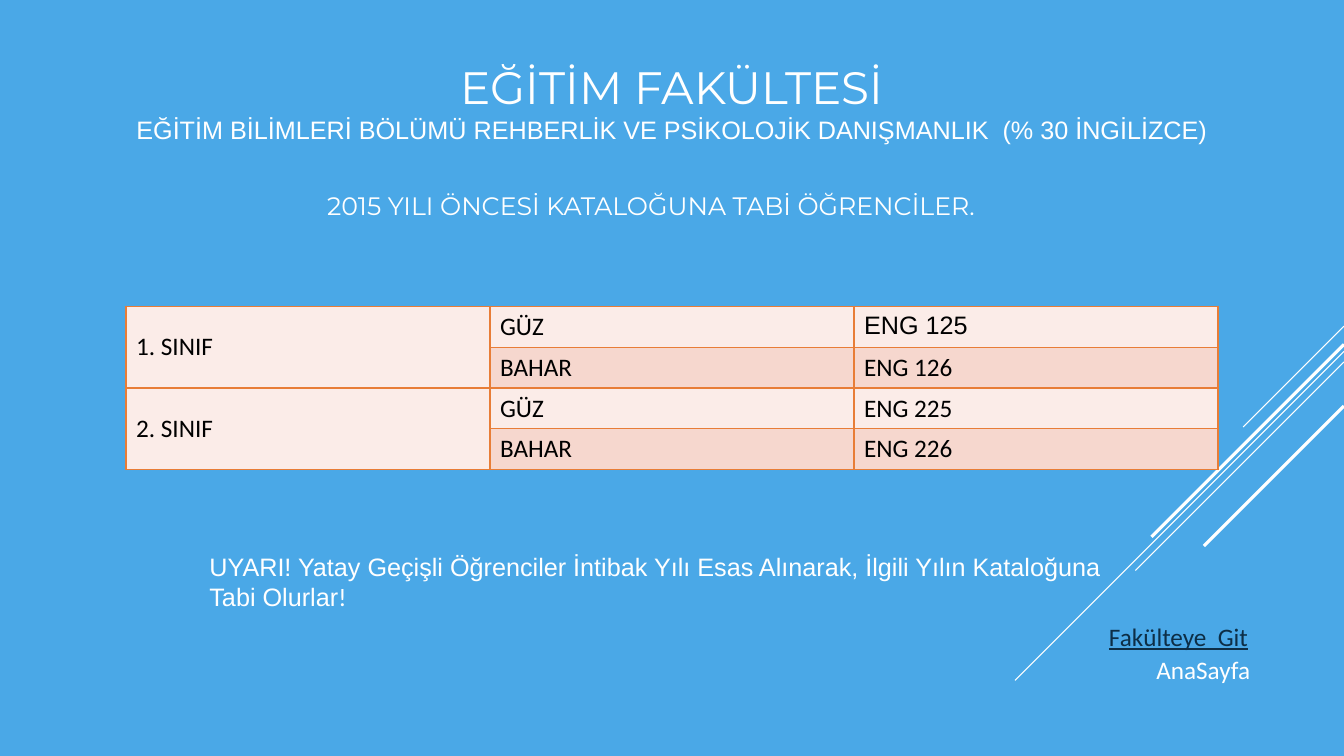
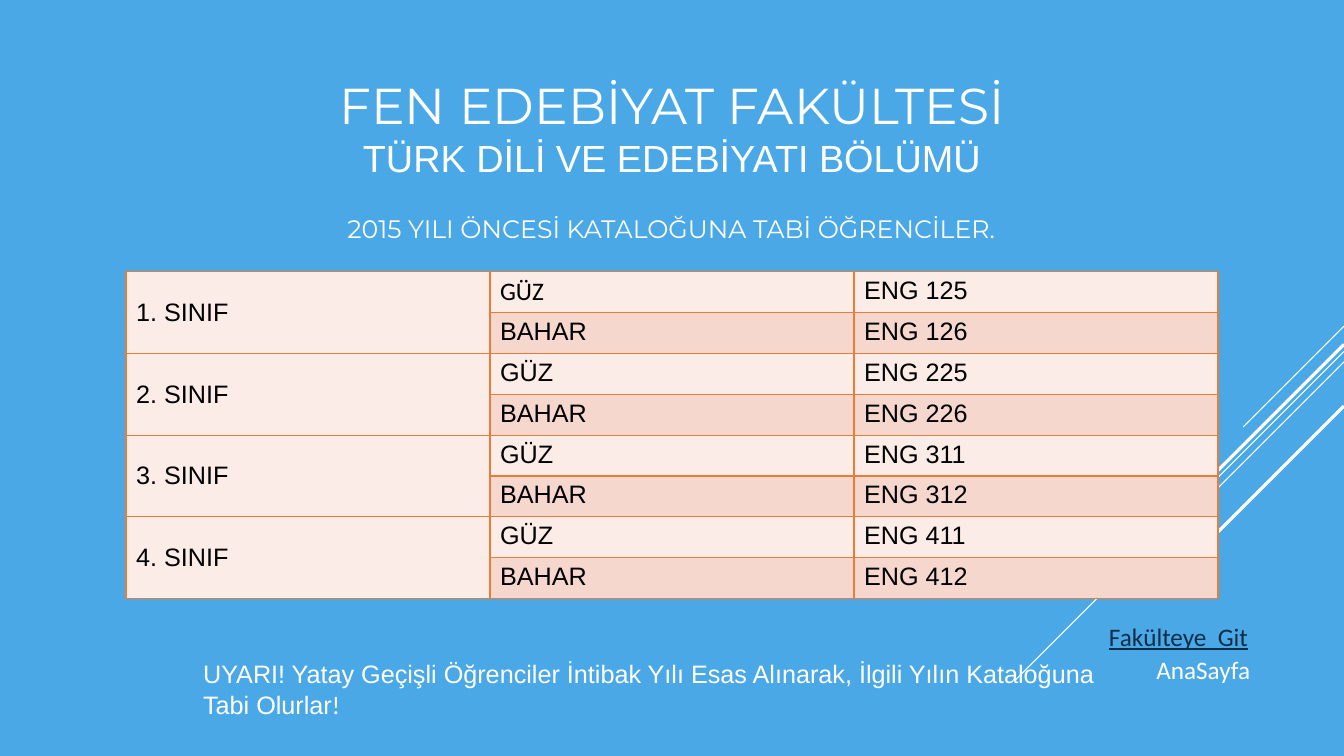
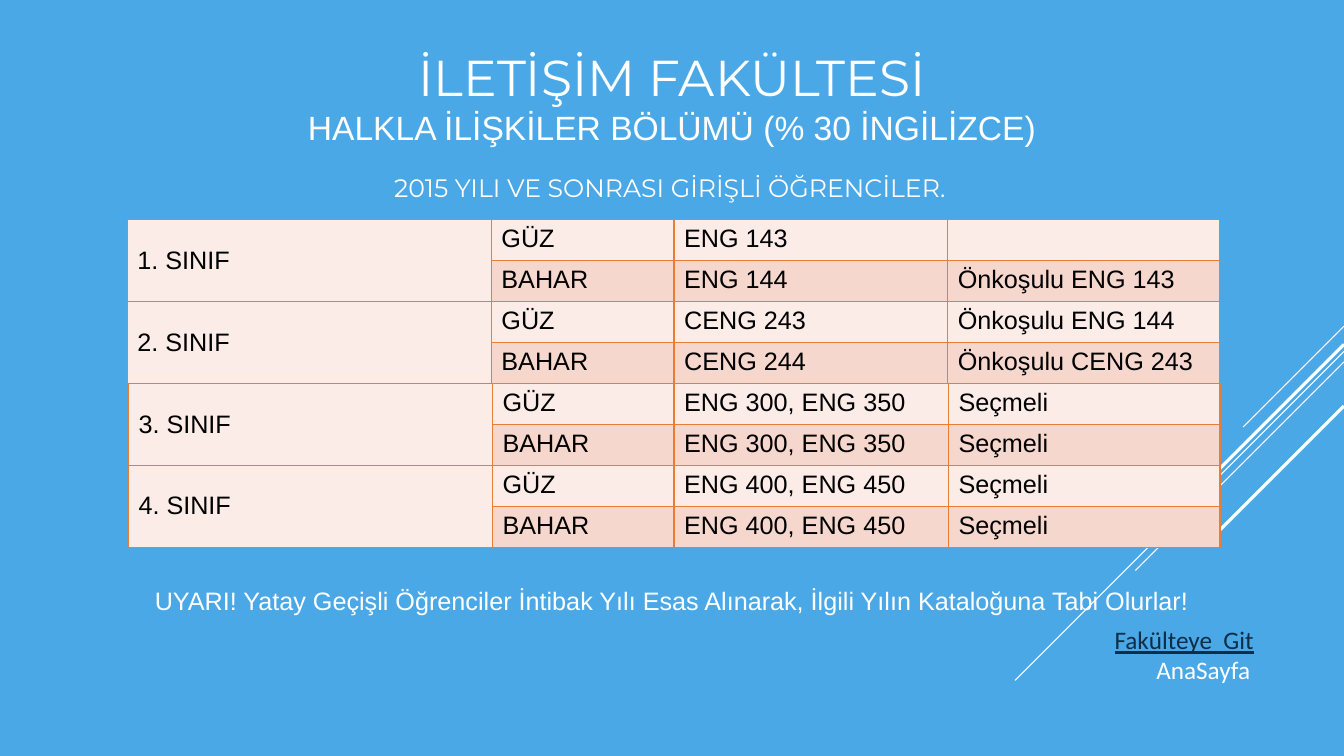
from dataclasses import dataclass

from lxml.etree import SubElement
from pptx import Presentation
from pptx.dml.color import RGBColor
from pptx.enum.shapes import MSO_CONNECTOR
from pptx.enum.text import MSO_ANCHOR, MSO_AUTO_SIZE, PP_ALIGN
from pptx.oxml.ns import qn
from pptx.util import Pt


@dataclass(frozen=True)
class Theme:
    background: str = "4AA8E7"
    light: str = "FFFFFF"
    dark: str = "000000"
    link: str = "0D2E46"
    border: str = "E87D37"
    bands: tuple = ("FBECE8", "F6D7CE")
    heading_font: str = "Montserrat"
    text_font: str = "Arial"
    nav_font: str = "Calibri"
    title_size: float = 36
    body_size: float = 18


T = Theme()
WIDTH, HEIGHT = 960, 540
ROW_HEIGHT = 29.2
TERMS = ("GÜZ", "BAHAR")
THREE_COLS = (260, 260, 260)
BEFORE_2015 = "2015 YILI ÖNCESİ KATALOĞUNA TABİ ÖĞRENCİLER."
SINCE_2015 = "2015 YILI VE SONRASI GİRİŞLİ ÖĞRENCİLER."
WARNING = ("UYARI! Yatay Geçişli Öğrenciler İntibak Yılı Esas Alınarak, "
           "İlgili Yılın Kataloğuna Tabi Olurlar")
# Start height on the right edge, horizontal reach, line width
RAYS = ((233, 72, 0.75), (251, 235, 0.75), (258.5, 149, 0.75),
        (246, 137.5, 2.25), (290, 100, 2.25))


def rgb(value):
    return RGBColor.from_string(value)


def style(font, name, size=T.body_size, color=T.light):
    font.name, font.size = name, Pt(size)
    font.color.rgb = rgb(color)


def add_box(s, box):
    tf = s.shapes.add_textbox(*map(Pt, box)).text_frame
    tf.word_wrap = True
    return tf


def add_line_of_text(s, box, text, font, color=T.light, align=PP_ALIGN.LEFT):
    tf = add_box(s, box)
    tf.auto_size = MSO_AUTO_SIZE.SHAPE_TO_FIT_TEXT
    p = tf.paragraphs[0]
    p.text, p.alignment = text, align
    style(p.font, font, color=color)
    return p


def add_rays(s):
    """Diagonal lines that run down at 45 degrees from the right edge."""
    for top, reach, width in RAYS:
        ray = s.shapes.add_connector(MSO_CONNECTOR.STRAIGHT, Pt(WIDTH), Pt(top),
                                     Pt(WIDTH - reach), Pt(top + reach))
        ray.line.color.rgb = rgb(T.light)
        ray.line.width = Pt(width)
        SubElement(ray._element.spPr, qn("a:effectLst"))


def add_title(s, box, faculty, department, faculty_size, department_size, raise_by=0):
    tf = add_box(s, box)
    tf.vertical_anchor = MSO_ANCHOR.MIDDLE
    tf.margin_bottom = Pt(3.6 + 2 * raise_by)
    lines = ((faculty, T.heading_font, faculty_size),
             (department, T.text_font, department_size))
    for i, (text, font, size) in enumerate(lines):
        p = tf.add_paragraph() if i else tf.paragraphs[0]
        p.text, p.alignment = text, PP_ALIGN.CENTER
        style(p.font, font, size)


def add_warning(s, box, mark_font):
    p = add_line_of_text(s, box, WARNING, T.text_font)
    r = p.add_run()
    r.text, r.font.name = "!", mark_font


def add_navigation(s, left, top):
    add_line_of_text(s, (814, 464, 91, 29), "AnaSayfa", T.nav_font,
                     align=PP_ALIGN.CENTER)
    p = add_line_of_text(s, (left, top, 120, 29), "Fakülteye  Git", T.nav_font, T.link)
    p.font.underline = True


def paint_cell(cell, text, font, fill):
    tcPr = cell._tc.get_or_add_tcPr()
    for side in ("a:lnL", "a:lnR", "a:lnT", "a:lnB"):
        ln = SubElement(tcPr, qn(side), w=str(Pt(1)))
        SubElement(SubElement(ln, qn("a:solidFill")), qn("a:srgbClr"), val=T.border)
    cell.fill.solid()
    cell.fill.fore_color.rgb = rgb(fill)
    p = cell.text_frame.paragraphs[0]
    p.text = text
    style(p.font, font, color=T.dark)


def add_courses(s, left, top, widths, years, first_year=1, font=T.text_font, odd_fonts=None):
    """Two rows, autumn and spring, for each year; odd_fonts maps (row, column) to a font."""
    odd_fonts = odd_fonts or {}
    n = 2 * len(years)
    table = s.shapes.add_table(n, len(widths), Pt(left), Pt(top), Pt(sum(widths)),
                               Pt(n * ROW_HEIGHT)).table
    table.first_row = table.horz_banding = False
    for column, width in zip(table.columns, widths):
        column.width = Pt(width)
    for row in range(n):
        table.rows[row].height = Pt(ROW_HEIGHT)
        year, term = divmod(row, 2)
        label = "" if term else f"{first_year + year}. SINIF"
        for col, text in enumerate((label, TERMS[term], *years[year][term])):
            paint_cell(table.cell(row, col), text, odd_fonts.get((row, col), font),
                       T.bands[term])
    for row in range(0, n, 2):
        table.cell(row, 0).merge(table.cell(row + 1, 0))
        table.cell(row, 0).vertical_anchor = MSO_ANCHOR.MIDDLE


def new_slide(prs):
    s = prs.slides.add_slide(prs.slide_layouts[6])
    s.background.fill.solid()
    s.background.fill.fore_color.rgb = rgb(T.background)
    add_rays(s)
    return s


def add_catalogue(s, left, top, text):
    add_line_of_text(s, (left, top, 620, 29), text, T.heading_font, align=PP_ALIGN.CENTER)


def education_slide(prs):
    s = new_slide(prs)
    add_title(s, (90, 49, 780, 83.5), "EĞİTİM FAKÜLTESİ",
              "EĞİTİM BİLİMLERİ BÖLÜMÜ REHBERLİK VE PSİKOLOJİK DANIŞMANLIK  (% 30 İNGİLİZCE)",
              32.4, T.body_size, raise_by=18)
    add_courses(s, 90, 218.75, THREE_COLS,
                ((("ENG 125",), ("ENG 126",)), (("ENG 225",), ("ENG 226",))),
                font=T.nav_font, odd_fonts={(0, 2): T.text_font})
    add_warning(s, (142.5, 390, 683, 51), T.nav_font)
    add_catalogue(s, 155, 132.5, BEFORE_2015)
    add_navigation(s, 785, 440)


def literature_slide(prs):
    s = new_slide(prs)
    add_title(s, (90, 49, 780, 83.5), "FEN EDEBİYAT FAKÜLTESİ",
              "TÜRK DİLİ VE EDEBİYATI BÖLÜMÜ", T.title_size, 27)
    years = [((f"ENG {autumn}",), (f"ENG {autumn + 1}",))
             for autumn in (125, 225, 311, 411)]
    add_courses(s, 90, 194, THREE_COLS, years, odd_fonts={(0, 1): T.nav_font})
    add_warning(s, (138, 467, 683, 51), T.nav_font)
    add_catalogue(s, 169.5, 149, BEFORE_2015)
    add_navigation(s, 785, 440)


def communication_slide(prs):
    s = new_slide(prs)
    add_title(s, (90, 14, 780, 110), "İLETİŞİM FAKÜLTESİ",
              "HALKLA İLİŞKİLER BÖLÜMÜ (% 30 İNGİLİZCE)", T.title_size, 24)
    add_courses(s, 91, 157, (260, 130.5, 195.5, 194), (
        (("ENG 143", ""), ("ENG 144", "Önkoşulu ENG 143")),
        (("CENG 243", "Önkoşulu ENG 144"), ("CENG 244", "Önkoşulu CENG 243"))))
    electives = [((f"ENG {code}, ENG {code + 50}", "Seçmeli"),) * 2 for code in (300, 400)]
    add_courses(s, 91.75, 274, (260, 129.75, 196, 194), electives, first_year=3)
    add_warning(s, (103.5, 414.5, 755, 29), T.text_font)
    add_catalogue(s, 168.5, 119.5, SINCE_2015)
    add_navigation(s, 789, 442.5)


def main():
    prs = Presentation()
    prs.slide_width, prs.slide_height = Pt(WIDTH), Pt(HEIGHT)
    education_slide(prs)
    literature_slide(prs)
    communication_slide(prs)
    prs.save("out.pptx")


if __name__ == "__main__":
    main()
